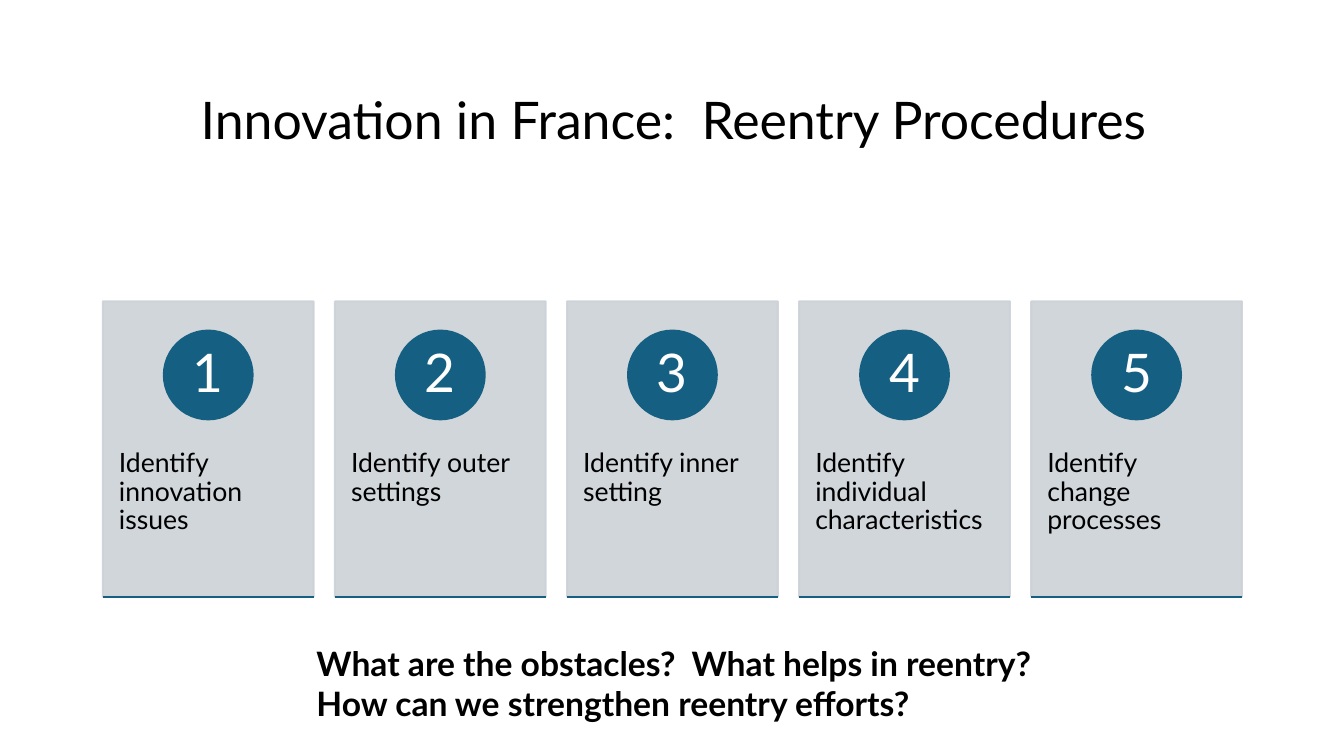
from lxml import etree
from pptx import Presentation
from pptx.dml.color import RGBColor
from pptx.enum.shapes import MSO_CONNECTOR, MSO_SHAPE
from pptx.enum.text import MSO_ANCHOR, PP_ALIGN
from pptx.oxml.ns import qn
from pptx.util import Inches, Pt

# Content
TITLE = "Innovation in France:  Reentry Procedures"
STEPS = [
    "Identify innovation issues",
    "Identify outer settings",
    "Identify inner setting",
    "Identify individual characteristics",
    "Identify change processes",
]
QUESTIONS = [
    "What are the obstacles?  What helps in reentry?",
    "How can we strengthen reentry efforts?",
]

# Style and layout, in inches
FONT = "Lato"
COLORS = {"text": "000000", "card": "CCD2D8", "accent": "156082", "number": "FFFFFF"}
CARD_LEFT, CARD_TOP, CARD_W, CARD_H = 1.02, 2.99, 2.09, 2.93
CARD_PITCH = 2.302
CIRCLE, CIRCLE_TOP = 0.88, 3.28


def rgb(name):
    return RGBColor.from_string(COLORS[name])


def write(tf, lines, size, color="text", align=PP_ALIGN.LEFT, spacing=None, bold=False):
    for i, line in enumerate(lines):
        p = tf.paragraphs[0] if i == 0 else tf.add_paragraph()
        p.alignment = align
        p.line_spacing = spacing
        r = p.add_run()
        r.text = line
        r.font.name = FONT
        r.font.size = Pt(size)
        r.font.bold = bold
        r.font.color.rgb = rgb(color)


def set_frame(tf, anchor, side, top, bottom):
    tf.word_wrap = True
    tf.vertical_anchor = anchor
    tf.margin_left = tf.margin_right = Inches(side)
    tf.margin_top, tf.margin_bottom = Inches(top), Inches(bottom)


def add_block(kind, left, top, width, height, color, opacity=100):
    sp = slide.shapes.add_shape(kind, Inches(left), Inches(top), Inches(width), Inches(height))
    sp.shadow.inherit = False
    sp.fill.solid()
    sp.fill.fore_color.rgb = rgb(color)
    sp.line.color.rgb = rgb(color)
    sp.line.width = Pt(1.5)
    if opacity < 100:
        for clr in sp.element.spPr.iter(qn("a:srgbClr")):
            etree.SubElement(clr, qn("a:alpha")).set("val", str(opacity * 1000))
    return sp


prs = Presentation()
prs.slide_width, prs.slide_height = Inches(13.33), Inches(7.5)
slide = prs.slides.add_slide(prs.slide_layouts[5])

# Title
title = slide.shapes.title
title.left, title.top = Inches(1.67), Inches(0.6)
title.width, title.height = Inches(10.02), Inches(1.24)
title.text_frame.vertical_anchor = MSO_ANCHOR.MIDDLE
write(title.text_frame, [TITLE], 37, align=PP_ALIGN.CENTER, spacing=0.9)

# Numbered step cards
for i, step in enumerate(STEPS):
    left = CARD_LEFT + i * CARD_PITCH
    card = add_block(MSO_SHAPE.RECTANGLE, left, CARD_TOP, CARD_W, CARD_H, "card", 90)
    set_frame(card.text_frame, MSO_ANCHOR.TOP, 0.16, 1.47, 0.36)
    write(card.text_frame, [step], 19, spacing=0.9)

    circle = add_block(MSO_SHAPE.OVAL, left + (CARD_W - CIRCLE) / 2, CIRCLE_TOP,
                       CIRCLE, CIRCLE, "accent")
    set_frame(circle.text_frame, MSO_ANCHOR.MIDDLE, 0.07, 0.01, 0.01)
    write(circle.text_frame, [str(i + 1)], 38, "number", PP_ALIGN.CENTER, 0.9)

    bottom = Inches(CARD_TOP + CARD_H)
    rule = slide.shapes.add_connector(MSO_CONNECTOR.STRAIGHT, Inches(left), bottom,
                                      Inches(left + CARD_W), bottom)
    rule.line.color.rgb = rgb("accent")
    rule.line.width = Pt(1.5)
    etree.SubElement(rule.element.spPr, qn("a:effectLst"))

# Closing questions
box = slide.shapes.add_textbox(Inches(3.04), Inches(6.33), Inches(7.61), Inches(0.91))
box.text_frame.word_wrap = True
write(box.text_frame, QUESTIONS, 24, bold=True)

prs.save("out.pptx")
